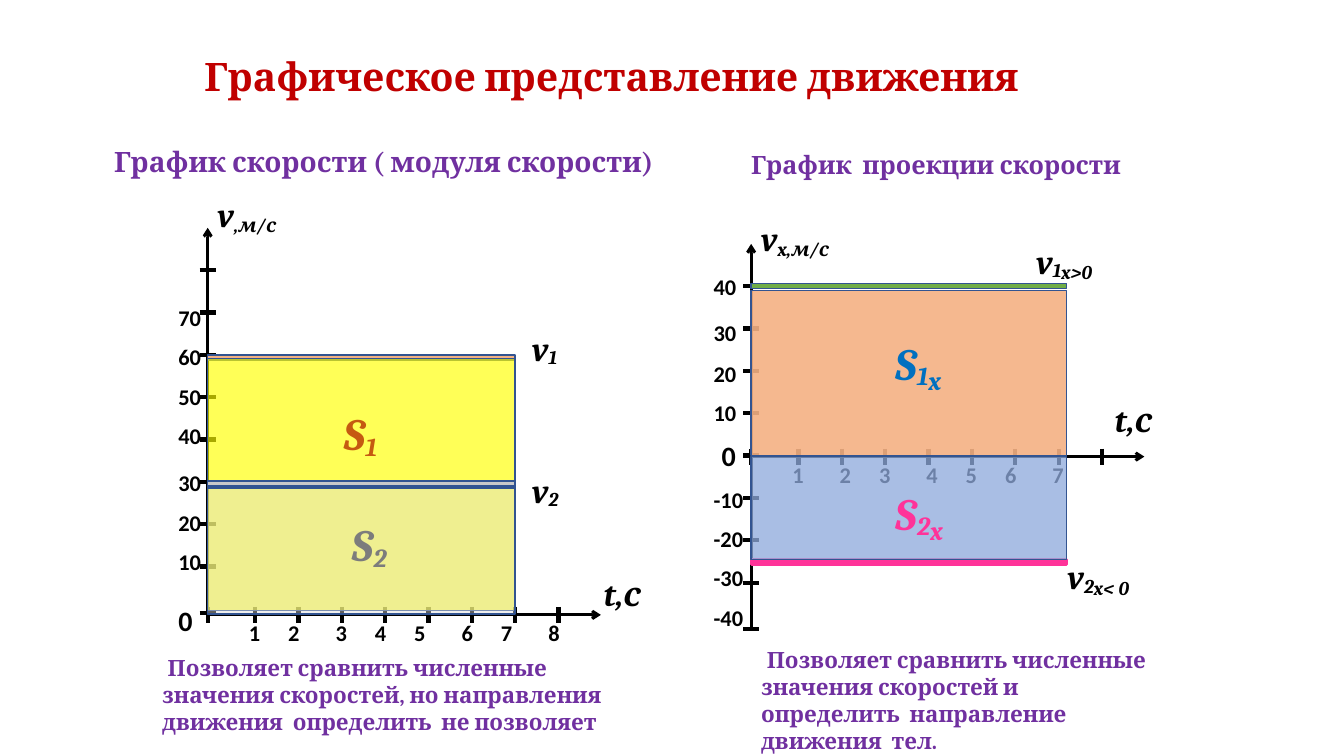
import pptx
import pptx.util
import pptx.dml.color
import pptx.enum.shapes
import pptx.enum.text
import pptx.oxml.ns
import lxml.etree

Inches = pptx.util.Inches
COLORS = {
    "black": "000000", "red": "C00000", "purple": "7030A0", "outline": "325491",
    "orange": "F4B183", "yellow": "FFFF00", "gray": "C9C9C9", "pale": "DBDBDB",
    "green": "70AD47", "pink": "FF3399", "sky": "8FAADC", "blue": "0070C0",
    "dark gray": "7C7C7C", "rust": "C55A11",
}


def rgb(name):
    return pptx.dml.color.RGBColor.from_string(COLORS[name])


def add_xml(parent, tag, **attributes):
    return lxml.etree.SubElement(parent, pptx.oxml.ns.qn(tag), attributes)


class MotionSlide:
    serif = "Cambria"
    sans = "Calibri"

    def __init__(self, deck):
        self.slide = deck.slides.add_slide(deck.slide_layouts[5])

    def style(self, span, size, color, font, italic=False):
        span.font.size = pptx.util.Pt(size)
        span.font.name = font
        span.font.bold = True
        span.font.italic = italic
        span.font.color.rgb = rgb(color)

    def title(self, text, left, top, width, height):
        box = self.slide.shapes.title
        box.left, box.top, box.width, box.height = map(Inches, (left, top, width, height))
        box.text_frame.text = text
        para = box.text_frame.paragraphs[0]
        para.alignment = pptx.enum.text.PP_ALIGN.CENTER
        self.style(para.runs[0], 28, "red", self.serif)

    def text_box(self, left, top, width, height, wrap=False):
        box = self.slide.shapes.add_textbox(*map(Inches, (left, top, width, height)))
        box.text_frame.word_wrap = wrap
        return box.text_frame.paragraphs[0]

    def heading(self, text, left, top, width, height, size):
        para = self.text_box(left, top, width, height, wrap=True)
        para.text = text
        para.alignment = pptx.enum.text.PP_ALIGN.CENTER
        self.style(para.runs[0], size, "purple", self.serif)

    def conclusion(self, text, left, top, width, indent_font):
        para = self.text_box(left, top, width, 0.94, wrap=True)
        for part, size, font in ((" ", 18, indent_font), (text, 16, self.serif)):
            span = para.add_run()
            span.text = part
            self.style(span, size, "purple", font)

    def number(self, text, left, top, width=0.43, height=0.37, size=16):
        para = self.text_box(left, top, width, height)
        para.text = text
        self.style(para.runs[0], size, "black", self.sans)

    def symbol(self, parts, left, top, width, height=0.5, size=24, color="black"):
        """Write an italic symbol; parts are (text, baseline shift in percent)."""
        para = self.text_box(left, top, width, height)
        for text, shift in parts:
            span = para.add_run()
            span.text = text
            self.style(span, size, color, self.serif, italic=True)
            if shift:
                span.font._element.set("baseline", str(shift * 1000))

    def line(self, x1, y1, x2, y2, width=3, arrow=False):
        connector = self.slide.shapes.add_connector(
            pptx.enum.shapes.MSO_CONNECTOR.STRAIGHT, *map(Inches, (x1, y1, x2, y2)))
        connector.line.width = pptx.util.Pt(width)
        connector.line.color.rgb = rgb("black")
        if arrow:
            add_xml(connector.line._get_or_add_ln(), "a:tailEnd", type="arrow")
        add_xml(connector._element.spPr, "a:effectLst")

    def axes(self, left, time_y, bottom):
        """Draw both axes; the first tick gap is longer than the others."""
        self.line(left, time_y, left + 3.9, time_y, 2, arrow=True)
        for offset in [0] + [0.47 + 0.43 * step for step in range(8)]:
            self.line(left + offset, time_y - 0.08, left + offset, time_y + 0.08)
        self.line(left, bottom, left, bottom - 3.82, 2, arrow=True)
        for offset in [0] + [0.46 + 0.42 * step for step in range(8)]:
            self.line(left - 0.08, bottom - offset, left + 0.08, bottom - offset)

    def time_numbers(self, lefts, top):
        for number, left in enumerate(lefts, 1):
            self.number(str(number), left, top, 0.32)

    def speed_numbers(self, left, tops):
        for number, top in tops.items():
            self.number(str(number), left, top, 0.43 if number > 0 else 0.5)

    def area(self, left, top, width, height, color, opacity=100, outline="outline", weight=1):
        shape = self.slide.shapes.add_shape(
            pptx.enum.shapes.MSO_SHAPE.RECTANGLE, *map(Inches, (left, top, width, height)))
        shape.shadow.inherit = False
        shape.fill.solid()
        shape.fill.fore_color.rgb = rgb(color)
        shape.line.color.rgb = rgb(outline)
        shape.line.width = pptx.util.Pt(weight)
        if opacity < 100:
            fill_color = shape._element.spPr.find(pptx.oxml.ns.qn("a:solidFill"))[0]
            add_xml(fill_color, "a:alpha", val=str(opacity * 1000))


def draw_speed_graph(page):
    left, width = 2.06, 3.05
    page.heading("График скорости ( модуля скорости)", 1.03, 1.38, 5.55, 0.44, 20)
    page.axes(left, 6.1, 6.08)
    page.symbol([("v", 0), (",м/с", -16)], 2.06, 1.87, 0.86)
    page.symbol([("t,с", 0)], 5.89, 5.63, 0.7)
    page.number("0", 1.67, 5.94, 0.34, 0.44, 20)
    page.speed_numbers(1.67, {70: 2.97, 60: 3.36, 50: 3.75, 40: 4.14, 30: 4.61, 20: 5, 10: 5.39})
    page.time_numbers([2.37, 2.76, 3.23, 3.62, 4.01, 4.48, 4.87, 5.34], 6.09)
    page.area(left, 3.52, width, 0.05, "orange")
    page.area(left, 3.56, width, 2.5, "yellow", 66)
    page.area(left, 4.77, width, 0.05, "gray")
    page.area(left, 4.84, width, 1.25, "pale", 44)
    page.symbol([("S", 0), ("1", -12)], 3.31, 3.98, 0.6, 0.64, 32, "rust")
    page.symbol([("S", 0), ("2", -12)], 3.39, 5.08, 0.6, 0.64, 32, "dark gray")
    page.symbol([("v", 0), ("1", -10)], 5.18, 3.2, 0.5)
    page.symbol([("v", 0), ("2", -10)], 5.18, 4.61, 0.5)
    page.conclusion("Позволяет сравнить численные значения скоростей, но направления "
                    "движения  определить  не позволяет", 1.51, 6.41, 4.69, page.serif)


def draw_projection_graph(page):
    left, width = 7.45, 3.13
    page.heading("График  проекции скорости", 7.06, 1.43, 4.45, 0.4, 18)
    page.axes(left, 4.53, 6.24)
    page.symbol([("v", 0), ("x,м/с", -16)], 7.45, 2.11, 0.89)
    page.symbol([("t,с", 0)], 10.96, 3.91, 0.7)
    page.number("0", 7.06, 4.3, 0.34, 0.44, 20)
    page.speed_numbers(6.98, {40: 2.66, 30: 3.12, 20: 3.52, 10: 3.91,
                              -10: 4.77, -20: 5.16, -30: 5.55, -40: 5.94})
    page.time_numbers([7.76, 8.23, 8.62, 9.09, 9.48, 9.87, 10.34], 4.53)
    page.area(left, 2.81, width, 0.05, "green")
    page.area(left, 5.55, width, 0.05, "pink", outline="pink", weight=2)
    page.area(left, 2.88, width, 1.64, "orange", 90)
    page.area(left, 4.53, width, 1.02, "sky", 76)
    page.symbol([("S", 0), ("1", -12), ("x", -22)], 8.78, 3.28, 0.75, 0.64, 32, "blue")
    page.symbol([("S", 0), ("2", -12), ("x", -22)], 8.78, 4.77, 0.75, 0.64, 32, "pink")
    page.symbol([("v", 0), ("1", -10), ("x>0", -16)], 10.18, 2.34, 0.86)
    page.symbol([("v", 0), ("2", -10), ("x< 0", -16)], 10.49, 5.47, 0.92)
    page.conclusion("Позволяет сравнить численные значения скоростей и определить  "
                    "направление движения  тел.", 7.45, 6.33, 4.06, page.sans)


def main():
    deck = pptx.Presentation()
    deck.slide_width, deck.slide_height = Inches(13.33), Inches(7.5)
    page = MotionSlide(deck)
    page.title("Графическое представление движения", 0.72, 0.47, 10.69, 0.57)
    draw_speed_graph(page)
    draw_projection_graph(page)
    deck.save("out.pptx")


if __name__ == "__main__":
    main()
